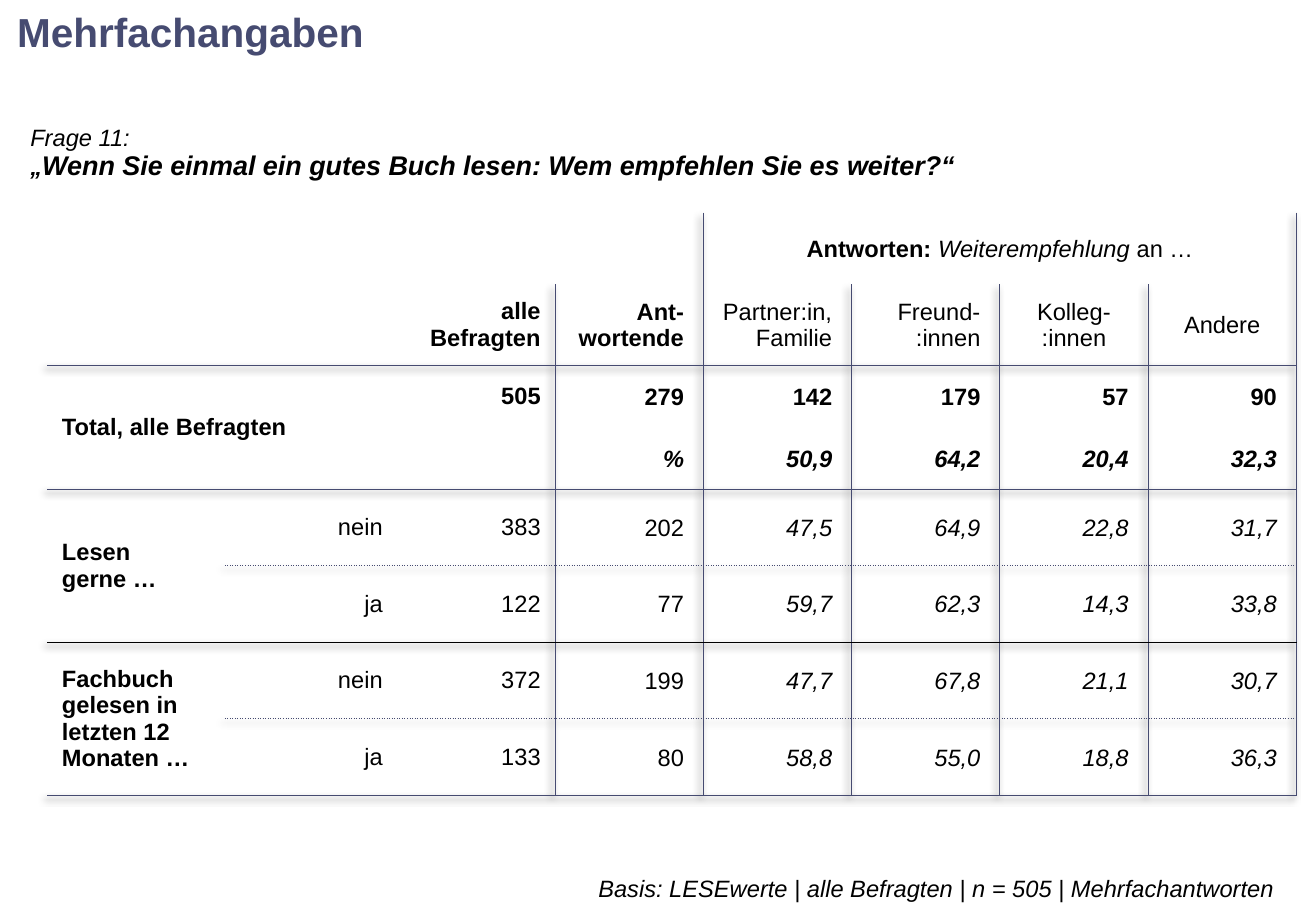
import copy

import pptx
import pptx.dml.color
import pptx.enum.shapes
import pptx.enum.text
import pptx.oxml
import pptx.oxml.ns
import pptx.util

Inches, Pt = pptx.util.Inches, pptx.util.Pt
PP_ALIGN = pptx.enum.text.PP_ALIGN
LEFT, CENTER, RIGHT = PP_ALIGN.LEFT, PP_ALIGN.CENTER, PP_ALIGN.RIGHT
MIDDLE = pptx.enum.text.MSO_ANCHOR.MIDDLE

NAVY, BLACK, WHITE = "464B71", "000000", "FFFFFF"
PLAIN, BOLD, ITALIC = {}, {"bold": True}, {"italic": True}
BOLD_ITALIC = {**BOLD, **ITALIC}

TITLE = "Mehrfachangaben"
BASIS = "Basis: LESEwerte | alle Befragten | n = 505 | Mehrfachantworten"
QUESTION = [
    ("Frage 11:\n", ITALIC),
    ("„", BOLD_ITALIC),
    ("Wenn Sie einmal ein gutes Buch lesen: Wem empfehlen Sie es weiter?“",
     {**BOLD_ITALIC, "size": Pt(16)}),
]
ANSWERS = [("Antworten: ", BOLD), ("Weiterempfehlung", ITALIC), (" an …", PLAIN)]
HEADERS = ["alle\nBefragten", "Ant-\nwortende", "Partner:in,\nFamilie",
           "Freund-\n:innen", "Kolleg-\n:innen", "Andere"]
GROUPS = {3: "Total, alle Befragten", 5: "Lesen\ngerne …",
          7: "Fachbuch gelesen in\nletzten 12\nMonaten …"}
TOTALS = [
    ["505", "279", "142", "179", "57", "90"],
    ["", "%", "50,9", "64,2", "20,4", "32,3"],
]
BREAKDOWN = [
    ["nein", "383", "202", "47,5", "64,9", "22,8", "31,7"],
    ["ja", "122", "77", "59,7", "62,3", "14,3", "33,8"],
    ["nein", "372", "199", "47,7", "67,8", "21,1", "30,7"],
    ["ja", "133", "80", "58,8", "55,0", "18,8", "36,3"],
]

COLUMN_WIDTHS = [0.26, 1.46, 1.42, 1.3] + [1.22] * 5
ROW_HEIGHTS = [0.98, 0.59, 0.67] + [0.51] * 2 + [0.63] * 4
MERGES = [((0, 0), (0, 8)), ((1, 5), (1, 8)), ((3, 0), (4, 0)), ((3, 1), (4, 2)),
          ((5, 0), (6, 0)), ((5, 1), (6, 1)), ((7, 1), (8, 1))]
SOLID, DOTTED, THIN = (NAVY, 0.75, "solid"), (NAVY, 0.75, "sysDot"), (BLACK, 0.5, "solid")
# row above the rule: (first column, line)
ROW_RULES = {2: (1, SOLID), 4: (1, SOLID), 5: (2, DOTTED),
             6: (1, THIN), 7: (2, DOTTED), 8: (1, SOLID)}
# column left of the rule: first row
COLUMN_RULES = {3: 2, 4: 1, 5: 2, 6: 2, 7: 2, 8: 1}
WIDE_INSETS = (0.12, 0.05, 0.12, 0.05)
VALUE_INSETS = (0.01, 0.01, 0.16, 0)
CENTER_INSETS = (0.01, 0.01, 0.01, 0)
SHADOW = (
    '<a:effectLst %s><a:outerShdw blurRad="50800" dist="38100" dir="8100000" '
    'algn="tr" rotWithShape="0"><a:srgbClr val="000000"><a:alpha val="40000"/>'
    '</a:srgbClr></a:outerShdw></a:effectLst>' % pptx.oxml.ns.nsdecls("a"))


def rgb(value):
    return pptx.dml.color.RGBColor.from_string(value)


def set_all(target, values):
    for name, value in values.items():
        setattr(target, name, value)


def set_insets(target, insets):
    sides = ("margin_left", "margin_top", "margin_right", "margin_bottom")
    set_all(target, dict(zip(sides, map(Inches, insets))))


def write(paragraph, runs, align=LEFT, color=BLACK):
    """Add styled runs; a newline becomes a line break of the same size."""
    paragraph.alignment = align
    for text, style in runs:
        for index, piece in enumerate(text.split("\n")):
            if index:
                paragraph.add_line_break()
                line_break = paragraph._p[-1]
                line_break.append(copy.deepcopy(run._r.rPr))
            if piece:
                run = paragraph.add_run()
                run.text = piece
                set_all(run.font, {"name": "Arial", "size": Pt(14), "bold": False,
                                   "italic": False, **style})
                run.font.color.rgb = rgb(color)


def fill_cell(row, column, runs, align=RIGHT, insets=WIDE_INSETS):
    cell = table.cell(row, column)
    set_insets(cell, insets)
    write(cell.text_frame.paragraphs[0], runs, align)


def row_rule(row, column):
    first, line = ROW_RULES.get(row, (99, None))
    return line if column >= first else None


def column_rule(row, column):
    return SOLID if row >= COLUMN_RULES.get(column, 99) else None


def draw_borders(cell, row, column):
    """Rule all four sides, and state plainly where a side has no line."""
    last_row = row + (cell.span_height - 1 if cell.is_merge_origin else 0)
    last_column = column + (cell.span_width - 1 if cell.is_merge_origin else 0)
    edges = {"lnL": column_rule(row, column - 1), "lnR": column_rule(row, last_column),
             "lnT": row_rule(row - 1, column), "lnB": row_rule(last_row, column)}
    properties = cell._tc.get_or_add_tcPr()
    for position, (tag, line) in enumerate(edges.items()):
        width, content = 0, "<a:noFill/>"
        if line:
            color, width, dash = line
            content = (f'<a:solidFill><a:srgbClr val="{color}"/></a:solidFill>'
                       f'<a:prstDash val="{dash}"/>')
        properties.insert(position, pptx.oxml.parse_xml(
            f'<a:{tag} {pptx.oxml.ns.nsdecls("a")} w="{Pt(width)}">{content}</a:{tag}>'))


deck = pptx.Presentation()
deck.slide_width, deck.slide_height = Inches(10.83), Inches(7.5)
slide = deck.slides.add_slide(deck.slide_layouts[5])

title = slide.shapes.title
set_all(title, {"left": 0, "top": 0, "width": Inches(3.12), "height": Inches(0.51)})
set_all(title.text_frame, {"word_wrap": False, "vertical_anchor": MIDDLE})
set_insets(title.text_frame, (0.14, 0.05, 0.1, 0.05))
write(title.text_frame.paragraphs[0], [(TITLE, {**BOLD, "size": Pt(24)})], color=NAVY)

table = slide.shapes.add_table(
    len(ROW_HEIGHTS), len(COLUMN_WIDTHS), Inches(0.13), Inches(0.77),
    Inches(sum(COLUMN_WIDTHS)), Inches(sum(ROW_HEIGHTS))).table
set_all(table, {"first_row": False, "horz_banding": False})
table_properties = table._tbl.tblPr
table_properties[0].text = "{2D5ABB26-0587-4C30-8999-92F81FD0307C}"
table_properties.insert(0, pptx.oxml.parse_xml(SHADOW))
for column, width in zip(table.columns, COLUMN_WIDTHS):
    column.width = Inches(width)
for row, height in zip(table.rows, ROW_HEIGHTS):
    row.height = Inches(height)
for start, end in MERGES:
    table.cell(*start).merge(table.cell(*end))
for row in range(len(ROW_HEIGHTS)):
    for column in range(len(COLUMN_WIDTHS)):
        cell = table.cell(row, column)
        cell.vertical_anchor = MIDDLE
        cell.fill.background()
        draw_borders(cell, row, column)

fill_cell(0, 0, QUESTION, LEFT)
fill_cell(1, 5, ANSWERS, CENTER, CENTER_INSETS)
for column, header in enumerate(HEADERS, 3):
    centered = column >= 7
    insets = CENTER_INSETS if centered else VALUE_INSETS if column > 3 else WIDE_INSETS
    fill_cell(2, column, [(header, BOLD if column < 5 else PLAIN)],
              CENTER if centered else RIGHT, insets)
for row, group in GROUPS.items():
    fill_cell(row, 1, [(group, BOLD)], LEFT)
for row, (values, style) in enumerate(zip(TOTALS, (BOLD, BOLD_ITALIC)), 3):
    for column, value in enumerate(values, 3):
        fill_cell(row, column, [(value, style)],
                  insets=VALUE_INSETS if column > 3 else WIDE_INSETS)
for row, values in enumerate(BREAKDOWN, 5):
    for column, value in enumerate(values, 2):
        fill_cell(row, column, [(value, ITALIC if column > 4 else PLAIN)],
                  insets=VALUE_INSETS if column > 3 else WIDE_INSETS)

basis = slide.shapes.add_shape(pptx.enum.shapes.MSO_SHAPE.RECTANGLE, Inches(4.39),
                               Inches(7.12), Inches(6.16), Inches(0.36))
basis.shadow.inherit = False
basis.fill.solid()
basis.fill.fore_color.rgb = rgb(WHITE)
basis.line.fill.background()
set_all(basis.text_frame, {"word_wrap": True, "vertical_anchor": MIDDLE})
set_insets(basis.text_frame, (0.06,) * 4)
basis_line = basis.text_frame.paragraphs[0]
set_all(basis_line, {"line_spacing": 1.1, "space_before": Pt(3.5), "space_after": Pt(3.5)})
write(basis_line, [(BASIS, ITALIC)], RIGHT)

deck.save("out.pptx")
